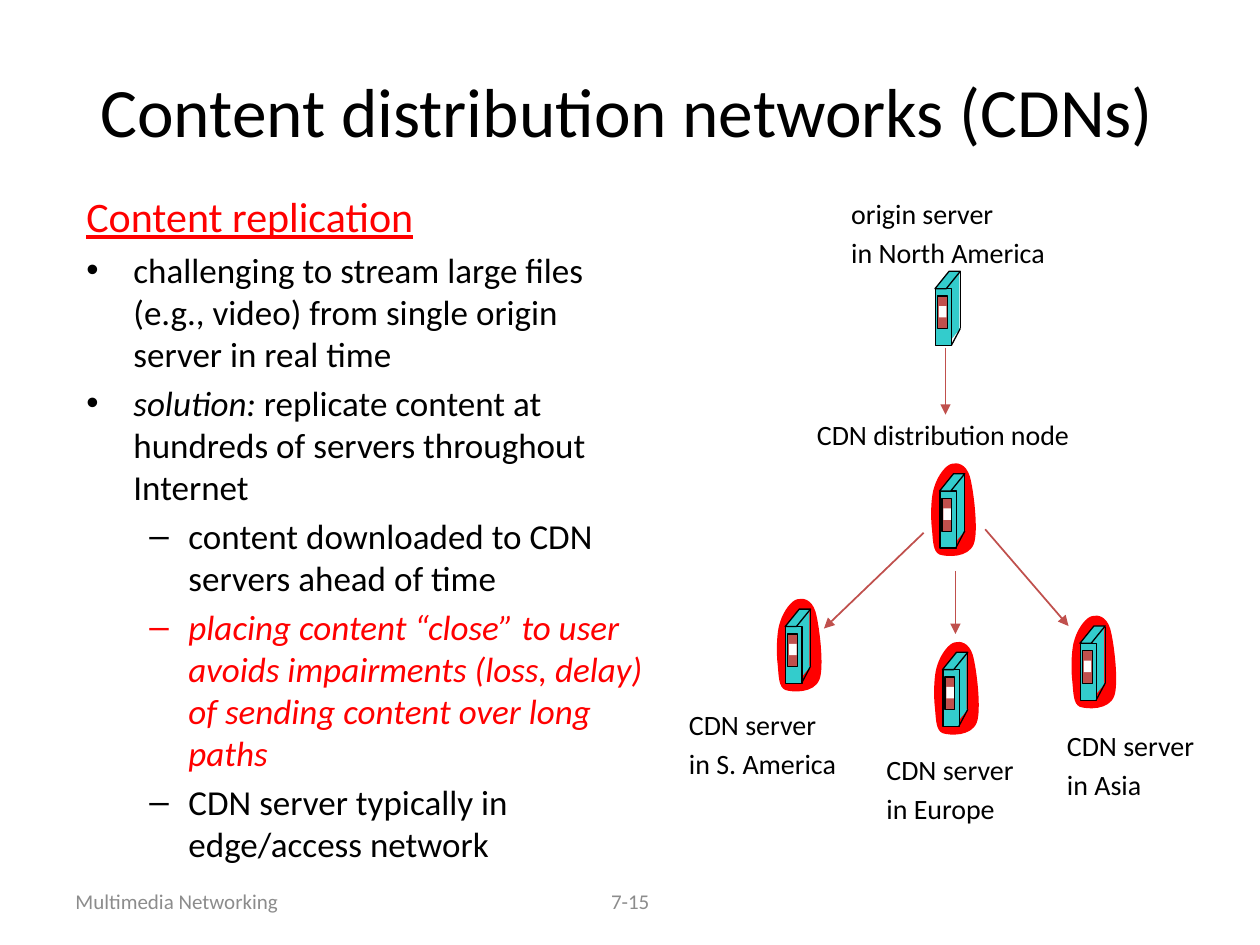
import pptx
import pptx.util
import pptx.dml.color
import pptx.enum.shapes
import pptx.enum.text
import pptx.oxml.ns
from lxml import etree

Cm, Pt = pptx.util.Cm, pptx.util.Pt
SHAPE = pptx.enum.shapes.MSO_SHAPE
ALIGN = pptx.enum.text.PP_ALIGN
ANCHOR = pptx.enum.text.MSO_ANCHOR
qn = pptx.oxml.ns.qn

BLACK, WHITE, RED, GREY = "000000", "FFFFFF", "FF0000", "8C8C8C"
TEAL, BRICK = "33CCCC", "C0504D"

# Halo outline around a server: start point, then cubic Bezier segments (cm).
HALO_START = (-0.1, 0.25)
HALO_CURVES = [
    ((-0.03, 0.03), (0.13, -0.18), (0.25, -0.2)),
    ((0.36, -0.23), (0.53, -0.2), (0.61, 0.05)),
    ((0.69, 0.33), (0.79, 1.17), (0.69, 1.42)),
    ((0.58, 1.7), (0.15, 1.68), (0, 1.63)),
    ((-0.13, 1.57), (-0.13, 1.37), (-0.15, 1.14)),
    ((-0.18, 0.91), (-0.18, 0.46), HALO_START),
]


def color(hex_value):
    return pptx.dml.color.RGBColor.from_string(hex_value)


def add_bullet(paragraph, character, indent, hanging):
    """Set a hanging indent, with a bullet character if one is given."""
    properties = paragraph._p.get_or_add_pPr()
    properties.set("marL", str(Cm(indent)))
    properties.set("indent", str(-Cm(hanging)))
    if character:
        etree.SubElement(properties, qn("a:buFont")).set("typeface", "Arial")
        etree.SubElement(properties, qn("a:buChar")).set("char", character)


def add_run(paragraph, text, size=16, fill=BLACK, italic=False, underline=False):
    run = paragraph.add_run()
    run.text = text
    run.font.name = "Calibri"
    run.font.size = Pt(size)
    run.font.color.rgb = color(fill)
    run.font.italic = italic
    run.font.underline = underline


def add_frame(slide, left, top, width, height, anchor=ANCHOR.TOP):
    frame = slide.shapes.add_textbox(Cm(left), Cm(top), Cm(width), Cm(height)).text_frame
    frame.word_wrap = True
    frame.vertical_anchor = anchor
    return frame


def add_text(slide, box, text, align=ALIGN.LEFT, anchor=ANCHOR.TOP, size=16, fill=BLACK):
    """Write each line of the text as a paragraph, a fifth of its size apart."""
    frame = add_frame(slide, *box, anchor=anchor)
    for number, line in enumerate(text.split("\n")):
        paragraph = frame.add_paragraph() if number else frame.paragraphs[0]
        paragraph.alignment = align
        if number:
            paragraph.space_before = Pt(size * 0.2)
        add_run(paragraph, line, size=size, fill=fill)


def add_body(slide):
    frame = add_frame(slide, 1.49, 3.72, 11.91, 13.64)
    heading = frame.paragraphs[0]
    add_bullet(heading, None, 0.95, 0.95)
    add_run(heading, "Content replication", size=24, fill=RED, underline=True)

    top, sub = ("•", 0.95, 0.95), ("–", 2.06, 0.79)
    points = [
        (top, [("challenging to stream large files (e.g., video) from single origin "
                "server in real time", {})]),
        (top, [("solution:", {"italic": True}),
               (" replicate content at hundreds of servers throughout Internet", {})]),
        (sub, [("content downloaded to CDN servers ahead of time", {})]),
        (sub, [("placing content “close” to user avoids impairments (loss, delay) "
                "of sending content over long paths", {"italic": True, "fill": RED})]),
        (sub, [("CDN server typically in edge/access network", {})]),
    ]
    for bullet, runs in points:
        paragraph = frame.add_paragraph()
        paragraph.level = int(bullet is sub)
        paragraph.space_before = Pt(4)
        add_bullet(paragraph, *bullet)
        for text, style in runs:
            add_run(paragraph, text, size=20, **style)


def add_line(shapes, start, end, fill=BLACK, width=0.75, arrow=False):
    line = shapes.add_connector(
        pptx.enum.shapes.MSO_CONNECTOR.STRAIGHT, *(Cm(value) for value in start + end))
    line.line.color.rgb = color(fill)
    line.line.width = Pt(width)
    properties = line._element.spPr
    if arrow:
        etree.SubElement(properties.find(qn("a:ln")), qn("a:tailEnd")).set("type", "triangle")
    etree.SubElement(properties, qn("a:effectLst"))


def paint(shape, fill, outlined=False):
    shape.shadow.inherit = False
    shape.fill.solid()
    shape.fill.fore_color.rgb = color(fill)
    if outlined:
        shape.line.color.rgb = color(BLACK)
        shape.line.width = Pt(0.75)
    else:
        shape.line.fill.background()


def add_halo(shapes, x, y):
    """Lay out the control points as a polygon, then turn each three into a curve."""
    builder = shapes.build_freeform(Cm(x + HALO_START[0]), Cm(y + HALO_START[1]))
    builder.add_line_segments(
        [(Cm(x + dx), Cm(y + dy)) for curve in HALO_CURVES for dx, dy in curve])
    halo = builder.convert_to_shape()
    segments = list(halo._element.iter(qn("a:lnTo")))
    outline = segments[0].getparent()
    for first in range(0, 3 * len(HALO_CURVES), 3):
        curve = etree.Element(qn("a:cubicBezTo"))
        outline.replace(segments[first], curve)
        for segment in segments[first:first + 3]:
            curve.append(segment[0])
            if segment.getparent() is not None:
                outline.remove(segment)
    paint(halo, RED)


def add_server(slide, x, y, halo=True):
    """Draw a server tower whose lid has its top left corner at x, y."""
    shapes = slide.shapes.add_group_shape().shapes
    if halo:
        add_halo(shapes, x, y)

    def add_part(kind, dx, dy, width, height, fill, outlined=False):
        part = shapes.add_shape(kind, Cm(x + dx), Cm(y + dy), Cm(width), Cm(height))
        if kind == SHAPE.PARALLELOGRAM:
            part.adjustments[0] = 0.81
        paint(part, fill, outlined)

    add_part(SHAPE.PARALLELOGRAM, 0, 1.15, 0.51, 0.35, TEAL)
    add_part(SHAPE.RECTANGLE, 0.26, 0.01, 0.23, 1.17, TEAL)
    add_part(SHAPE.RECTANGLE, 0.01, 0.35, 0.33, 1.15, TEAL, outlined=True)
    add_part(SHAPE.PARALLELOGRAM, 0, 0, 0.51, 0.35, TEAL, outlined=True)
    add_line(shapes, (x + 0.51, y + 0.02), (x + 0.51, y + 1.15))
    add_line(shapes, (x + 0.51, y + 1.15), (x + 0.33, y + 1.49))
    add_part(SHAPE.RECTANGLE, 0.05, 0.5, 0.2, 0.66, BRICK, outlined=True)
    add_part(SHAPE.RECTANGLE, 0.08, 0.7, 0.15, 0.23, WHITE)


def main():
    deck = pptx.Presentation()
    deck.slide_width, deck.slide_height = Cm(25.4), Cm(19.05)
    slide = deck.slides.add_slide(deck.slide_layouts[6])

    footer = {"anchor": ANCHOR.MIDDLE, "size": 12, "fill": GREY}
    add_text(slide, (1.27, 17.65, 5.92, 1.02), "Multimedia Networking", **footer)
    add_text(slide, (8.68, 17.65, 8.05, 1.02), "7-15", align=ALIGN.CENTER, **footer)
    add_text(slide, (1.49, 0.62, 22.3, 3.18), "Content distribution networks (CDNs)",
             align=ALIGN.CENTER, anchor=ANCHOR.MIDDLE, size=39.6)
    add_body(slide)

    add_server(slide, 18.85, 5.47, halo=False)
    for x, y in [(15.83, 12.28), (19, 13.15), (21.77, 12.62), (18.94, 9.55)]:
        add_server(slide, x, y)

    labels = [
        ((16.91, 3.83, 5.08, 1.75), "origin server\nin North America"),
        ((16.22, 8.29, 6.38, 0.94), "CDN distribution node"),
        ((13.64, 14.13, 4.01, 1.75), "CDN server\nin S. America"),
        ((17.62, 15.04, 3.58, 1.75), "CDN server\nin Europe"),
        ((21.26, 14.56, 3.58, 1.75), "CDN server\nin Asia"),
    ]
    for box, text in labels:
        add_text(slide, box, text)

    arrows = [
        ((19.06, 7.01), (19.06, 8.36)),
        ((18.62, 10.74), (16.61, 12.67)),
        ((19.26, 11.51), (19.26, 12.78)),
        ((19.86, 10.67), (21.54, 12.62)),
    ]
    for start, end in arrows:
        add_line(slide.shapes, start, end, fill=BRICK, width=1, arrow=True)

    deck.save("out.pptx")


if __name__ == "__main__":
    main()
